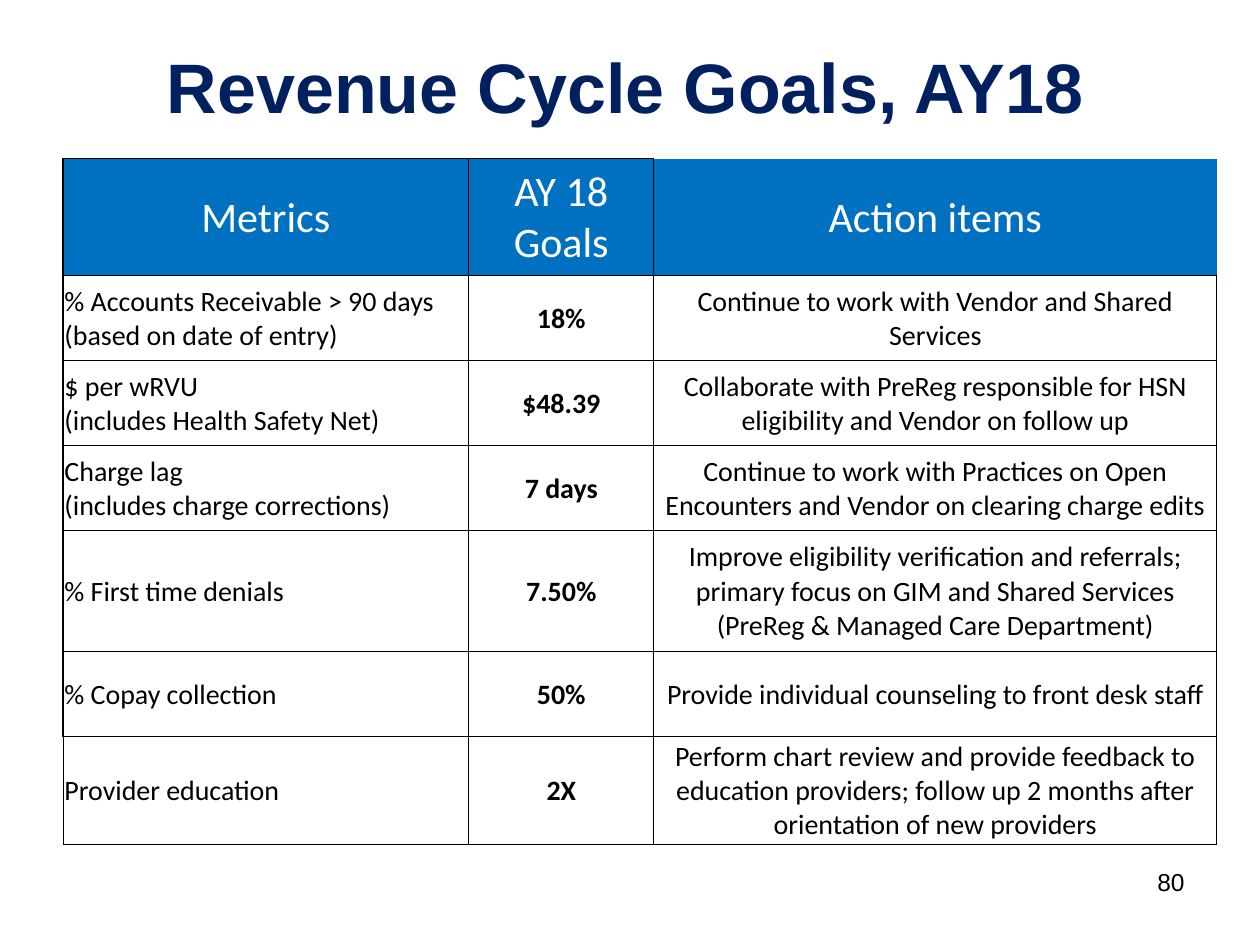
from lxml import etree
from pptx import Presentation
from pptx.dml.color import RGBColor
from pptx.enum.text import MSO_ANCHOR, PP_ALIGN
from pptx.oxml.ns import qn
from pptx.util import Cm, Pt

LEFT, CENTER, RIGHT = PP_ALIGN.LEFT, PP_ALIGN.CENTER, PP_ALIGN.RIGHT
TOP, MIDDLE = MSO_ANCHOR.TOP, MSO_ANCHOR.MIDDLE

NAVY = RGBColor(0x00, 0x20, 0x60)
BLUE = RGBColor(0x00, 0x70, 0xC0)
WHITE = RGBColor(0xFF, 0xFF, 0xFF)
BLACK = RGBColor(0x00, 0x00, 0x00)

COLUMN_WIDTHS = [8.18, 3.73, 11.35]
ROW_HEIGHTS = [2.36, 1.71, 1.71, 1.71, 2.44, 1.71, 2.18]
THICK, THIN, NO_LINE = 1, 0.5, 0

GOALS = [
    ("Metrics", "AY 18 Goals", "Action items"),
    ("% Accounts Receivable > 90 days\n(based on date of entry)", "18%",
     "Continue to work with Vendor and Shared Services"),
    ("$ per wRVU\n(includes Health Safety Net)", "$48.39",
     "Collaborate with PreReg responsible for HSN eligibility and Vendor on follow up"),
    ("Charge lag\n(includes charge corrections)", "7 days",
     "Continue to work with Practices on Open Encounters and Vendor on clearing charge edits"),
    ("% First time denials", "7.50%",
     "Improve eligibility verification and referrals; primary focus on GIM "
     "and Shared Services (PreReg & Managed Care Department)"),
    ("% Copay collection", "50%",
     "Provide individual counseling to front desk staff"),
    ("Provider education", "2X",
     "Perform chart review and provide feedback to education providers; "
     "follow up 2 months after orientation of new providers"),
]


def write_text(frame, text, align, font, size, color, bold=False):
    """Fill the first paragraph, with a line break at each newline."""
    para = frame.paragraphs[0]
    para.alignment = align
    for index, line in enumerate(text.split("\n")):
        if index:
            para.add_line_break()
        span = para.add_run()
        span.text = line
        span.font.name = font
        span.font.size = Pt(size)
        span.font.bold = bold
        span.font.color.rgb = color


def add_text_box(page, left, top, width, height, anchor, text, *style):
    box = page.shapes.add_textbox(Cm(left), Cm(top), Cm(width), Cm(height))
    frame = box.text_frame
    frame.word_wrap = True
    frame.vertical_anchor = anchor
    write_text(frame, text, *style)


def border_widths(row, column):
    """Return the line widths of a cell's sides, in the order the XML needs."""
    header, last_row = row == 0, row == len(GOALS) - 1
    open_corner = header and column == 2
    return {
        "a:lnL": THICK if column == 0 and not last_row else THIN,
        "a:lnR": NO_LINE if open_corner else THIN,
        "a:lnT": NO_LINE if open_corner else THICK if header else THIN,
        "a:lnB": THIN,
    }


def set_borders(cell, widths):
    properties = cell._tc.get_or_add_tcPr()
    for side, width in widths.items():
        line = etree.SubElement(properties, qn(side), w=str(Pt(width)))
        if width:
            fill = etree.SubElement(line, qn("a:solidFill"))
            etree.SubElement(fill, qn("a:srgbClr"), val=str(BLACK))
        else:
            etree.SubElement(line, qn("a:noFill"))


def format_cell(cell, row, column, text):
    cell.margin_left = cell.margin_right = cell.margin_top = Cm(0.03)
    cell.margin_bottom = 0
    cell.vertical_anchor = MIDDLE
    set_borders(cell, border_widths(row, column))
    if row == 0:
        cell.fill.solid()
        cell.fill.fore_color.rgb = BLUE
        write_text(cell.text_frame, text, CENTER, "Calibri", 24, WHITE)
    else:
        cell.fill.background()
        write_text(cell.text_frame, text, CENTER if column else LEFT,
                   "Calibri", 16, BLACK, column == 1)


def add_goals_table(page, left, top):
    table = page.shapes.add_table(
        len(ROW_HEIGHTS), len(COLUMN_WIDTHS), Cm(left), Cm(top),
        Cm(sum(COLUMN_WIDTHS)), Cm(sum(ROW_HEIGHTS))).table
    table.first_row = False
    table.horz_banding = False
    for column, width in zip(table.columns, COLUMN_WIDTHS):
        column.width = Cm(width)
    for row, height in zip(table.rows, ROW_HEIGHTS):
        row.height = Cm(height)
    for row, texts in enumerate(GOALS):
        for column, text in enumerate(texts):
            format_cell(table.cell(row, column), row, column, text)


def main():
    deck = Presentation()
    deck.slide_width, deck.slide_height = Cm(25.4), Cm(19.05)
    page = deck.slides.add_slide(deck.slide_layouts[6])
    add_text_box(page, 1.17, 0.13, 22.86, 3.18, MIDDLE,
                 "Revenue Cycle Goals, AY18", CENTER, "Arial", 40, NAVY, True)
    add_text_box(page, 18.21, 17.35, 5.92, 1.32, TOP,
                 "80", RIGHT, "Arial", 14, BLACK)
    add_goals_table(page, 1.27, 3.2)
    deck.save("out.pptx")


if __name__ == "__main__":
    main()
